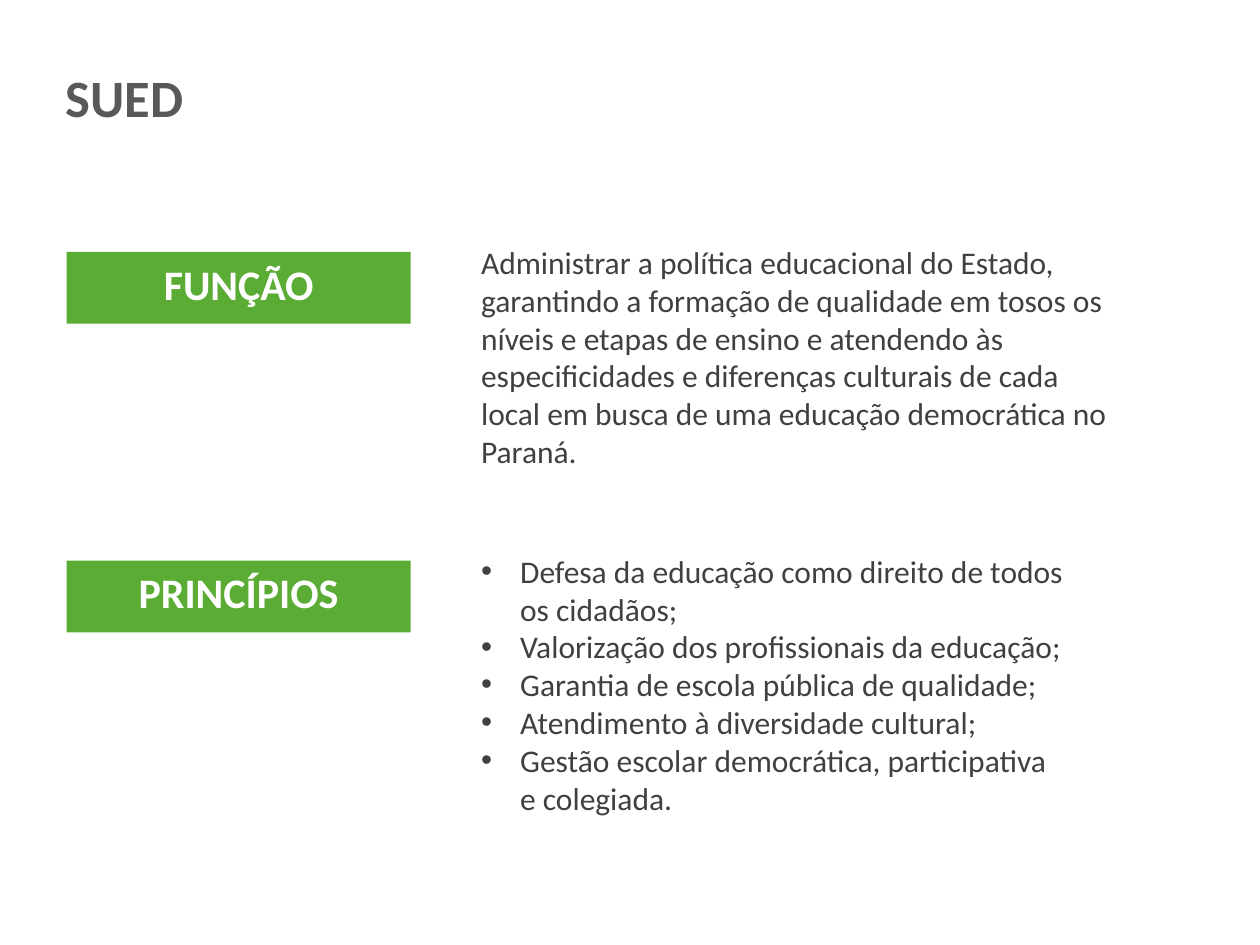
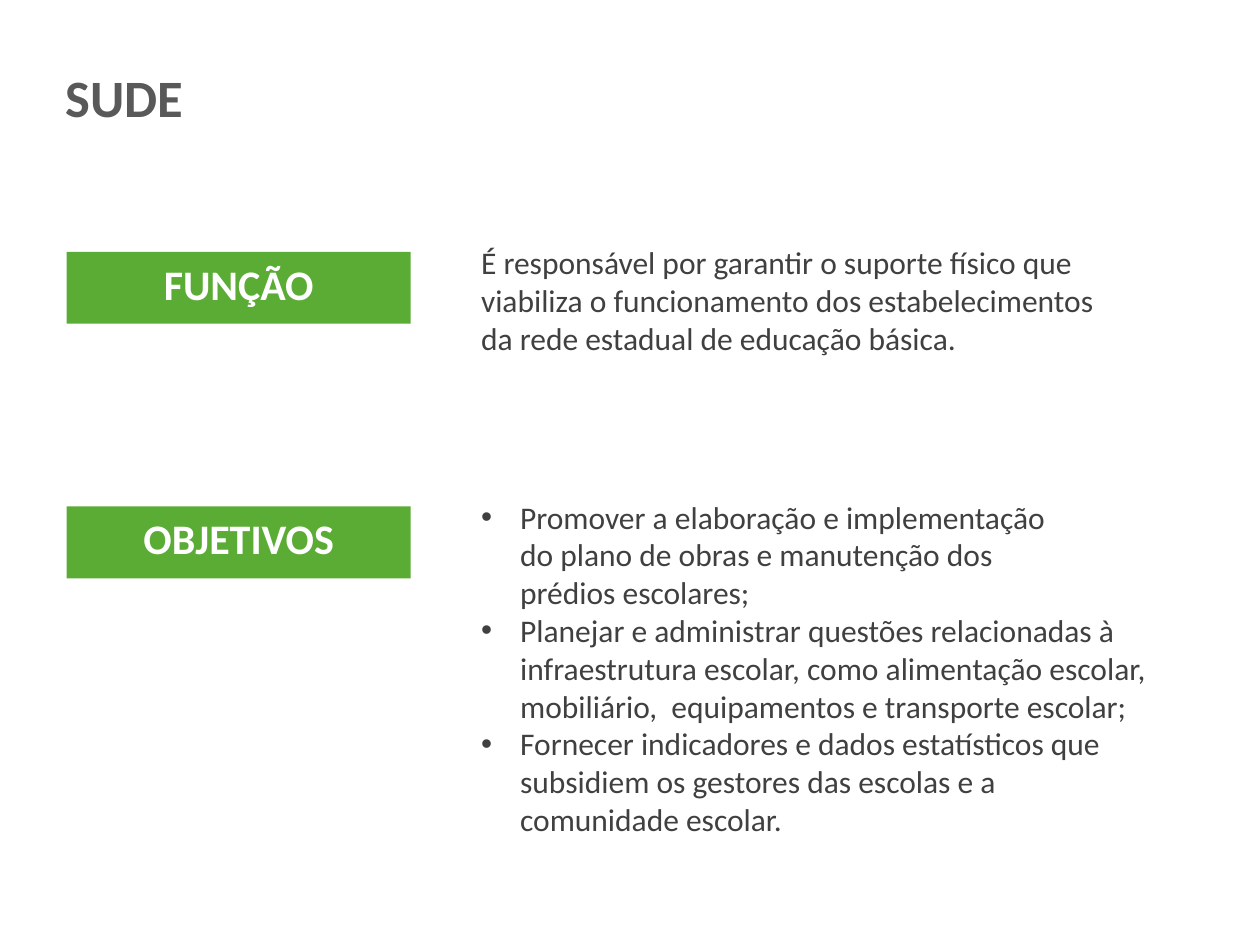
from dataclasses import dataclass

from lxml import etree
from pptx import Presentation, util as u
from pptx.dml.color import RGBColor
from pptx.enum import shapes, text
from pptx.oxml import ns

# Shared look
FONT = "Calibri"
GREEN, WHITE, GREY, DARK = "5BAC35", "FFFFFF", "595959", "404040"

# Shared grid, in inches
SLIDE_W, SLIDE_H = 10, 7.5
LABEL_X, LABEL_W, LABEL_H = 0.53, 2.73, 0.57
BODY_X, BODY_RISE = 3.72, 0.12
PLAIN_W, BULLET_W = 5.27, 5.58
LINE_H, PAD = 0.3, 0.1
BULLET_INDENT = 0.31


@dataclass
class Section:
    label: str
    top: float
    lines: int
    paragraphs: list[str]
    bulleted: bool = False


@dataclass
class Department:
    name: str
    sections: list[Section]


DEPARTMENTS = [
    Department("SUED", [
        Section("FUNÇÃO", 2, 6, [
            "Administrar a política educacional do Estado, garantindo a formação "
            "de qualidade em tosos os níveis e etapas de ensino e atendendo às "
            "especificidades e diferenças culturais de cada local em busca de uma "
            "educação democrática no Paraná."]),
        Section("PRINCÍPIOS", 4.45, 7, [
            "Defesa da educação como direito de todos \nos cidadãos;",
            "Valorização dos profissionais da educação;",
            "Garantia de escola pública de qualidade;",
            "Atendimento à diversidade cultural;",
            "Gestão escolar democrática, participativa \ne colegiada."], True),
    ]),
    Department("SUDE", [
        Section("FUNÇÃO", 2, 3, [
            "É responsável por garantir o suporte físico que viabiliza o "
            "funcionamento dos estabelecimentos da rede estadual de educação "
            "básica."]),
        Section("OBJETIVOS", 4.02, 9, [
            "Promover a elaboração e implementação \ndo plano de obras e "
            "manutenção dos \nprédios escolares;",
            "Planejar e administrar questões relacionadas à infraestrutura "
            "escolar, como alimentação escolar, mobiliário,  equipamentos e "
            "transporte escolar;",
            "Fornecer indicadores e dados estatísticos que subsidiem os gestores "
            "das escolas e a comunidade escolar."], True),
    ]),
]


def rgb(value: str) -> RGBColor:
    return RGBColor.from_string(value)


def box(x: float, y: float, w: float, h: float) -> list[int]:
    return [u.Inches(v) for v in (x, y, w, h)]


def write(p, content: str, size: int, color: str, bold: bool = False) -> None:
    """Add the text run by run, with a line break at each newline."""
    for i, line in enumerate(content.split("\n")):
        if i:
            p.add_line_break()
        r = p.add_run()
        r.text = line
        r.font.name, r.font.size, r.font.bold = FONT, u.Pt(size), bold
        r.font.color.rgb = rgb(color)


def add_bullet(p) -> None:
    pPr = p._p.get_or_add_pPr()
    indent = u.Inches(BULLET_INDENT)
    pPr.set("marL", str(indent))
    pPr.set("indent", str(-indent))
    etree.SubElement(pPr, ns.qn("a:buFont"), typeface="Arial")
    etree.SubElement(pPr, ns.qn("a:buChar"), char="•")


def set_title(s, name: str) -> None:
    sp = s.shapes.title
    sp.left, sp.top, sp.width, sp.height = box(0.42, 0.11, 3.09, 0.99)
    tf = sp.text_frame
    tf.auto_size = text.MSO_AUTO_SIZE.NONE
    tf.vertical_anchor = text.MSO_ANCHOR.BOTTOM
    tf.margin_bottom = u.Inches(0.09)
    p = tf.paragraphs[0]
    p.alignment, p.line_spacing = text.PP_ALIGN.LEFT, 0.8
    write(p, name, 30, GREY, True)


def add_label(s, section: Section) -> None:
    sp = s.shapes.add_shape(shapes.MSO_SHAPE.RECTANGLE,
                            *box(LABEL_X, section.top, LABEL_W, LABEL_H))
    sp.shadow.inherit = False
    sp.fill.solid()
    sp.fill.fore_color.rgb = rgb(GREEN)
    sp.line.fill.background()
    tf = sp.text_frame
    tf.vertical_anchor = text.MSO_ANCHOR.TOP
    p = tf.paragraphs[0]
    p.alignment = text.PP_ALIGN.CENTER
    write(p, section.label, 24, WHITE, True)


def add_body(s, section: Section) -> None:
    width = BULLET_W if section.bulleted else PLAIN_W
    sp = s.shapes.add_textbox(*box(BODY_X, section.top - BODY_RISE, width,
                                   section.lines * LINE_H + PAD))
    tf = sp.text_frame
    tf.word_wrap = True
    for i, content in enumerate(section.paragraphs):
        p = tf.add_paragraph() if i else tf.paragraphs[0]
        if section.bulleted:
            add_bullet(p)
        write(p, content, 18, DARK)


def main() -> None:
    prs = Presentation()
    prs.slide_width, prs.slide_height = u.Inches(SLIDE_W), u.Inches(SLIDE_H)
    for department in DEPARTMENTS:
        s = prs.slides.add_slide(prs.slide_layouts[5])
        set_title(s, department.name)
        for section in department.sections:
            add_label(s, section)
            add_body(s, section)
    prs.save("out.pptx")


if __name__ == "__main__":
    main()
